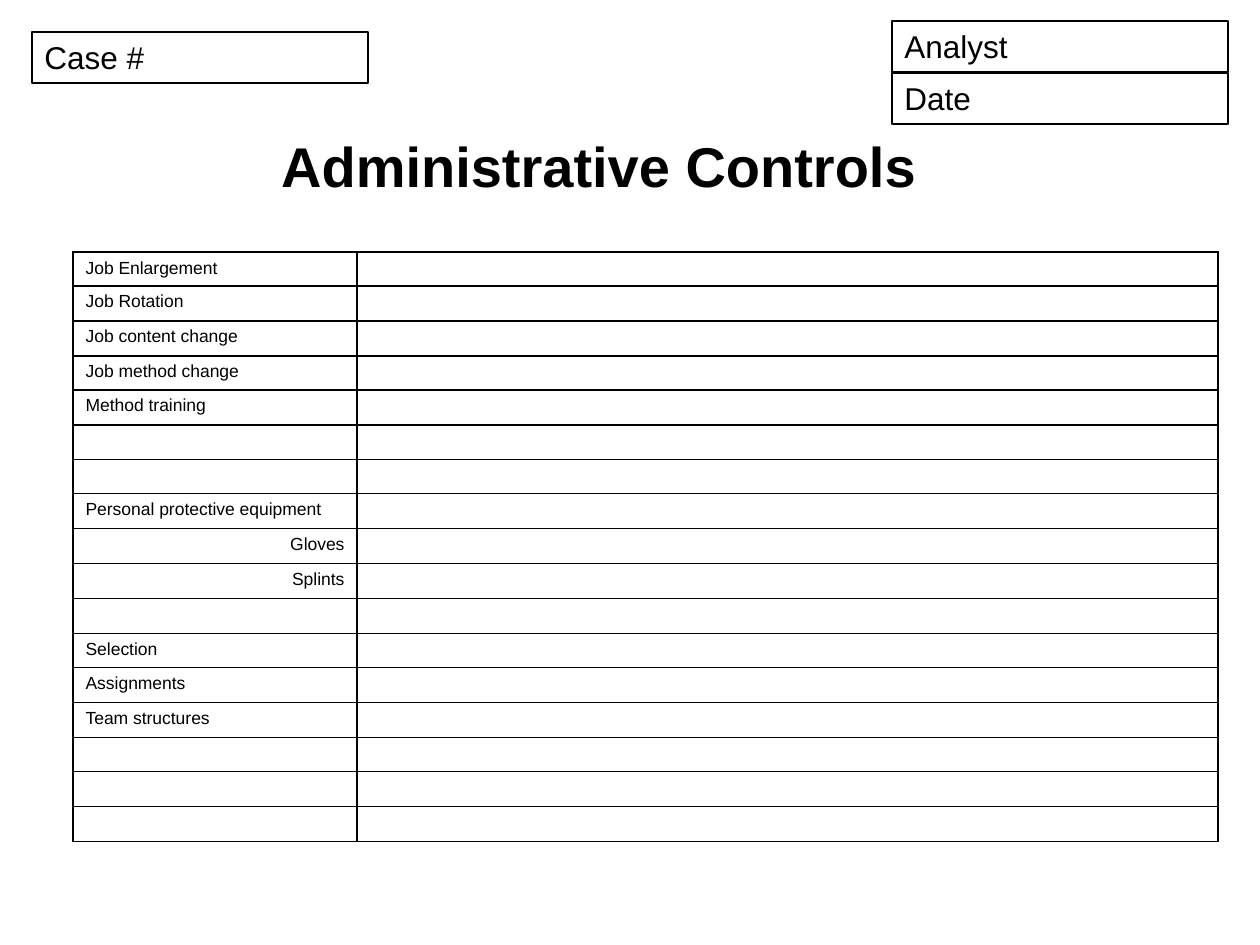
"""Build the Administrative Controls worksheet slide."""
from lxml import etree
from pptx import Presentation
from pptx.dml.color import RGBColor
from pptx.enum.shapes import MSO_SHAPE
from pptx.enum.text import MSO_ANCHOR, MSO_AUTO_SIZE, PP_ALIGN
from pptx.oxml.ns import qn
from pptx.util import Pt

RECTANGLE = MSO_SHAPE.RECTANGLE
TOP, MIDDLE = MSO_ANCHOR.TOP, MSO_ANCHOR.MIDDLE
LEFT, CENTER, RIGHT = PP_ALIGN.LEFT, PP_ALIGN.CENTER, PP_ALIGN.RIGHT
GROW = MSO_AUTO_SIZE.SHAPE_TO_FIT_TEXT
COLORS = {"ink": "000000", "paper": "FFFFFF"}
EMU_PER_PX = 914400 / 126
TITLE_ONLY = 5

CONTROLS = [
    "Job Enlargement", "Job Rotation", "Job content change",
    "Job method change", "Method training", "", "",
    "Personal protective equipment", "Gloves", "Splints", "",
    "Selection", "Assignments", "Team structures", "", "", "",
]
EQUIPMENT = {"Gloves", "Splints"}


def px(length):
    return round(length * EMU_PER_PX)


class Worksheet:
    """Hold the style and the current slide."""

    def __init__(self, width, height):
        self.font = "Arial"
        self.ink = RGBColor.from_string(COLORS["ink"])
        self.deck = Presentation()
        self.deck.slide_width, self.deck.slide_height = px(width), px(height)
        self.slide = self.deck.slides.add_slide(self.deck.slide_layouts[TITLE_ONLY])
        self.slide.background.fill.solid()
        self.slide.background.fill.fore_color.rgb = RGBColor.from_string(COLORS["paper"])

    def add_text(self, frame, text, size, align=LEFT, bold=False):
        paragraph = frame.paragraphs[0]
        paragraph.alignment = align
        run = paragraph.add_run()
        run.text = text
        run.font.name, run.font.size, run.font.bold = self.font, Pt(size), bold
        run.font.color.rgb = self.ink

    def title(self, text, left, top, width, height):
        heading = self.slide.shapes.title
        heading.left, heading.top = px(left), px(top)
        heading.width, heading.height = px(width), px(height)
        heading.text_frame.vertical_anchor = MIDDLE
        self.add_text(heading.text_frame, text, 32, CENTER, True)

    def field(self, label, left, top, width=336, height=51):
        box = self.slide.shapes.add_shape(RECTANGLE, px(left), px(top), px(width), px(height))
        box.shadow.inherit = False
        box.fill.background()
        box.line.color.rgb = self.ink
        box.line.width = Pt(1)
        frame = box.text_frame
        frame.word_wrap = True
        frame.auto_size = GROW
        frame.vertical_anchor = TOP
        self.add_text(frame, label, 18)

    def border(self, cell):
        properties = cell._tc.get_or_add_tcPr()
        for position, side in enumerate(("a:lnL", "a:lnR", "a:lnT", "a:lnB")):
            line = etree.Element(qn(side), w=str(Pt(1)))
            fill = etree.SubElement(line, qn("a:solidFill"))
            etree.SubElement(fill, qn("a:srgbClr"), val=COLORS["ink"])
            properties.insert(position, line)

    def table(self, labels, left, edges, widths):
        grid = self.slide.shapes.add_table(
            len(labels), len(widths), px(left), px(edges[0]),
            px(sum(widths)), px(edges[-1] - edges[0])).table
        grid.first_row = grid.horz_banding = False
        for column, width in zip(grid.columns, widths):
            column.width = px(width)
        for row, label, top, bottom in zip(grid.rows, labels, edges, edges[1:]):
            row.height = px(bottom - top)
            for cell, text in zip(row.cells, (label, "")):
                cell.fill.background()
                self.border(cell)
                if text:
                    align = RIGHT if text in EQUIPMENT else LEFT
                    self.add_text(cell.text_frame, text, 10, align)
                else:
                    paragraph = cell.text_frame.paragraphs[0]
                    etree.SubElement(paragraph._p, qn("a:endParaRPr"), sz="1000")


def main():
    sheet = Worksheet(1260, 945)
    sheet.title("Administrative Controls", 32, 126, 1134, 78)
    first_bottom, last_bottom = 284, 840
    steps = len(CONTROLS) - 1
    edges = [252] + [first_bottom + round((last_bottom - first_bottom) * step / steps)
                     for step in range(steps + 1)]
    sheet.table(CONTROLS, 73, edges, (284, 861))
    sheet.field("Case #", 32, 32)
    sheet.field("Date", 892, 73)
    sheet.field("Analyst", 892, 21)
    sheet.deck.save("out.pptx")


if __name__ == "__main__":
    main()
